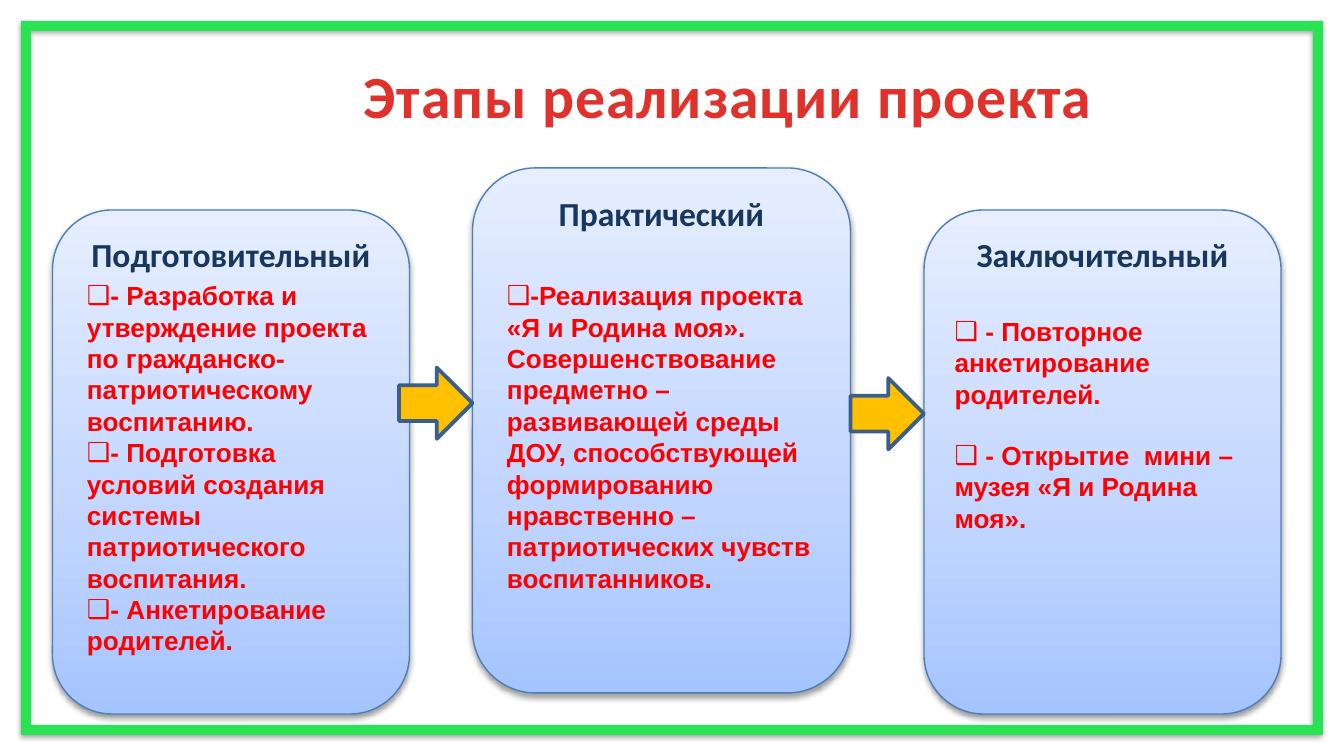
from dataclasses import dataclass
from typing import Any

import pptx
import pptx.dml.color
import pptx.enum.shapes
import pptx.enum.text
import pptx.oxml
import pptx.oxml.ns
import pptx.util

CELL = 10 / 64  # the page is a grid of 64 columns by 36 rows
NAVY, RED, GREEN, AMBER = "17375E", "FF0000", "29E355", "FFC000"
CARD_GRADIENT = ((0, "A4C4FF"), (35, "BFD4FF"), (100, "E6EEFF"))
Kind = pptx.enum.shapes.MSO_SHAPE
Align = pptx.enum.text.PP_ALIGN


@dataclass
class Area:
    """A rectangle in grid columns and rows."""
    column: float
    row: float
    columns: float
    rows: float


@dataclass
class Stage:
    title: str
    card: Area
    items: tuple[str, ...]
    list_area: Area | None = None  # None keeps the list inside the card


STAGES = (
    Stage("Подготовительный", Area(2.5, 10, 17, 24), (
        "- Разработка и утверждение проекта по гражданско-патриотическому воспитанию.",
        "- Подготовка условий создания системы патриотического воспитания.",
        "- Анкетирование родителей."), Area(3.5, 13, 15, 18.75)),
    Stage("Практический", Area(22.5, 8, 18, 25), (
        "-Реализация проекта «Я и Родина моя». Совершенствование предметно – "
        "развивающей среды ДОУ, способствующей формированию нравственно – "
        "патриотических чувств воспитанников.",), Area(23.5, 13, 16.5, 18.75)),
    Stage("Заключительный", Area(44, 10, 17, 24), (
        " - Повторное анкетирование родителей.",
        " - Открытие  мини – музея «Я и Родина моя».")),
)
ARROWS = (Area(19, 17.5, 3.5, 3.4), Area(40.5, 18, 3.5, 3.4))


def cells(count: float) -> int:
    return pptx.util.Inches(count * CELL)


def color(value: str) -> pptx.dml.color.RGBColor:
    return pptx.dml.color.RGBColor.from_string(value)


def place(shape: Any, area: Area) -> None:
    shape.left, shape.top = cells(area.column), cells(area.row)
    shape.width, shape.height = cells(area.columns), cells(area.rows)


def add_shape(page: Any, kind: Any, area: Area, fill: str,
              line: str | None = None, weight: float = 1) -> Any:
    shape = page.shapes.add_shape(kind, cells(area.column), cells(area.row),
                                  cells(area.columns), cells(area.rows))
    shape.shadow.inherit = False
    shape.fill.solid()
    shape.fill.fore_color.rgb = color(fill)
    if line:
        shape.line.color.rgb = color(line)
        shape.line.width = pptx.util.Pt(weight)
    else:
        shape.line.fill.background()
    return shape


def add_shadow(shape: Any, opacity: int, distance: float) -> None:
    effects = shape.element.spPr.find(pptx.oxml.ns.qn("a:effectLst"))
    effects.append(pptx.oxml.parse_xml(
        f'<a:outerShdw {pptx.oxml.ns.nsdecls("a")} blurRad="{pptx.util.Pt(3.1)}" '
        f'dist="{pptx.util.Pt(distance)}" dir="5400000" rotWithShape="0">'
        f'<a:srgbClr val="000000"><a:alpha val="{opacity * 1000}"/></a:srgbClr>'
        '</a:outerShdw>'))


def set_gradient(shape: Any, stops: tuple[tuple[int, str], ...]) -> None:
    """Replace the solid fill by a gradient that runs upwards."""
    solid = shape.element.spPr.find(pptx.oxml.ns.qn("a:solidFill"))
    marks = "".join(f'<a:gs pos="{share * 1000}"><a:srgbClr val="{value}"/></a:gs>'
                    for share, value in stops)
    gradient = pptx.oxml.parse_xml(
        f'<a:gradFill {pptx.oxml.ns.nsdecls("a")} rotWithShape="1">'
        f'<a:gsLst>{marks}</a:gsLst><a:lin ang="16200000" scaled="0"/></a:gradFill>')
    solid.getparent().replace(solid, gradient)


def write(para: Any, text: str, size: float, font: str, ink: str, align: Any) -> Any:
    para.alignment = align
    span = para.add_run()
    span.text = text
    span.font.size, span.font.name, span.font.bold = pptx.util.Pt(size), font, True
    span.font.color.rgb = color(ink)
    return span


def add_bullet(para: Any) -> None:
    properties = para._p.get_or_add_pPr()
    properties.set("marL", "0")
    properties.set("indent", "0")
    for markup in ('a:buFont {} typeface="Arial"', 'a:buChar {} char="❑"'):
        properties.append(pptx.oxml.parse_xml(
            f'<{markup.format(pptx.oxml.ns.nsdecls("a"))}/>'))


def write_item(para: Any, text: str, gap: float) -> None:
    add_bullet(para)
    para.space_before = pptx.util.Pt(gap)
    write(para, text, 14, "Arial", RED, Align.LEFT)


def prepare(frame: Any, wrap: bool = True) -> None:
    frame.word_wrap = wrap
    frame.auto_size = pptx.enum.text.MSO_AUTO_SIZE.NONE
    frame.vertical_anchor = pptx.enum.text.MSO_ANCHOR.TOP


def add_card(page: Any, stage: Stage) -> None:
    card = add_shape(page, Kind.ROUNDED_RECTANGLE, stage.card, "BFD4FF", "4B7EBC", 0.75)
    set_gradient(card, CARD_GRADIENT)
    add_shadow(card, 38, 1.6)
    prepare(card.text_frame)
    write(card.text_frame.paragraphs[0], stage.title, 18, "Calibri", NAVY, Align.CENTER)
    if stage.list_area is None:
        for number, item in enumerate(stage.items):
            write_item(card.text_frame.add_paragraph(), item, 16 if number else 22)


def fill_list(body: Any, stage: Stage) -> None:
    place(body, stage.list_area)
    prepare(body.text_frame)
    for number, item in enumerate(stage.items):
        frame = body.text_frame
        para = frame.add_paragraph() if number else frame.paragraphs[0]
        write_item(para, item, 0)
    body.element.getparent().append(body.element)  # bring in front of the cards


def main() -> None:
    deck = pptx.Presentation()
    deck.slide_width, deck.slide_height = cells(64), cells(36)
    page = deck.slides.add_slide(deck.slide_layouts.get_by_name("Two Content"))
    title, *bodies = page.placeholders

    border = add_shape(page, Kind.FRAME, Area(1, 1, 62, 34), GREEN)
    border.adjustments[0] = 0.014
    add_shadow(border, 35, 1.8)

    place(title, Area(16.5, 2.5, 36.35, 4.1))
    prepare(title.text_frame, wrap=False)
    span = write(title.text_frame.paragraphs[0], "Этапы реализации проекта",
                 32, "Calibri", "E0322D", Align.CENTER)
    span.font._element.set("spc", "50")

    for stage in STAGES:
        add_card(page, stage)
    for area in ARROWS:
        add_shape(page, Kind.RIGHT_ARROW, area, AMBER, "3A5F8C", 2)
    listed = [stage for stage in STAGES if stage.list_area]
    for body, stage in zip(bodies, listed):
        fill_list(body, stage)
    deck.save("out.pptx")


if __name__ == "__main__":
    main()
